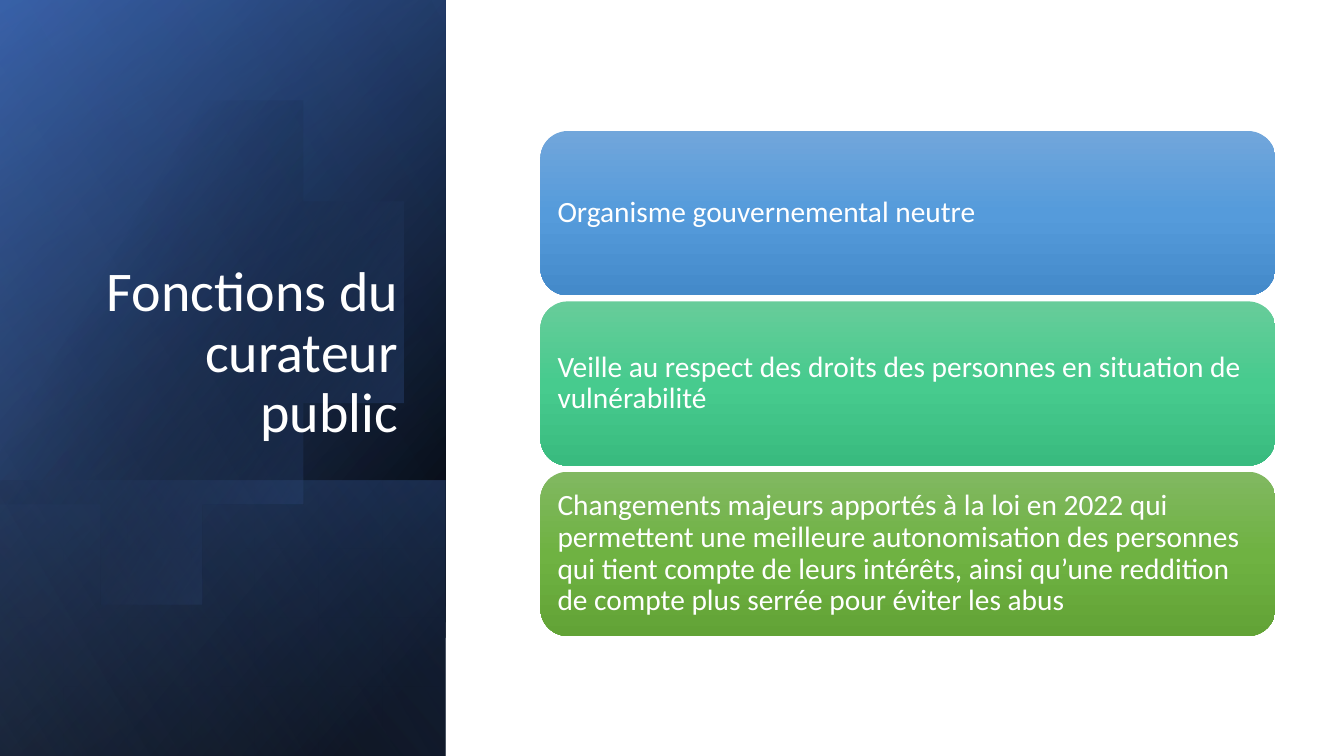
from dataclasses import dataclass
from math import acos, cos, pi, sin

from pptx import Presentation
from pptx.dml.color import RGBColor
from pptx.enum.shapes import MSO_SHAPE
from pptx.enum.text import MSO_ANCHOR, PP_ALIGN
from pptx.oxml import parse_xml
from pptx.oxml.ns import nsdecls, qn
from pptx.util import Inches, Pt


@dataclass(frozen=True)
class Theme:
    font: str = "Calibri"
    title_size: int = 40
    card_size: int = 21
    text: str = "FFFFFF"
    base: tuple = ((8, "000000", 100), (100, "2F5597", 100))
    glow: tuple = ((0, "000000", 0), (99, "4472C4", 46))
    footer: tuple = ((2, "4472C4", 29), (100, "000000", 30))
    disc: tuple = ((29, "000000", 0), (100, "4472C4", 43))
    sheen: tuple = ((0, "000000", 0), (99, "8FAADC", 11))
    cards: tuple = (
        ("71A6DB", "559BDB", "448ACA"),
        ("67CC9A", "47CB8E", "39BB7F"),
        ("81B861", "6FB242", "62A336"),
    )


THEME = Theme()
SLIDE_W, SLIDE_H = 13.33, 7.5
TITLE = "Fonctions du curateur public"
FUNCTIONS = (
    "Organisme gouvernemental neutre",
    "Veille au respect des droits des personnes en situation de vulnérabilité",
    "Changements majeurs apportés à la loi en 2022 qui permettent une meilleure "
    "autonomisation des personnes qui tient compte de leurs intérêts, ainsi qu’une "
    "reddition de compte plus serrée pour éviter les abus",
)


def paint(shape, stops, angle):
    shape.shadow.inherit = False
    shape.line.fill.background()
    shape.fill.background()
    stop_xml = "".join(
        f'<a:gs pos="{pos * 1000}"><a:srgbClr val="{color}">'
        f'<a:alpha val="{opacity * 1000}"/></a:srgbClr></a:gs>'
        for pos, color, opacity in stops
    )
    gradient = parse_xml(
        f'<a:gradFill {nsdecls("a")} rotWithShape="1"><a:gsLst>{stop_xml}</a:gsLst>'
        f'<a:lin ang="{angle * 60000}" scaled="0"/></a:gradFill>'
    )
    properties = shape.element.spPr
    properties.replace(properties.find(qn("a:noFill")), gradient)


def write(frame, text, size, anchor, align):
    frame.word_wrap = True
    frame.vertical_anchor = anchor
    frame.text = text
    paragraph = frame.paragraphs[0]
    paragraph.alignment = align
    paragraph.line_spacing = 0.9
    font = paragraph.runs[0].font
    font.name = THEME.font
    font.size = Pt(size)
    font.color.rgb = RGBColor.from_string(THEME.text)


def add_turned_layer(slide, box, stops, angle):
    left, top, width, height = box
    shift = (height - width) / 2
    layer = slide.shapes.add_shape(
        MSO_SHAPE.RECTANGLE,
        *map(Inches, (left - shift, top + shift, height, width)),
    )
    layer.rotation = 90
    layer.element.spPr.find(qn("a:xfrm")).set("flipH", "1")
    paint(layer, stops, angle)


def add_cut_disc(slide, box):
    left, top, width, height = box
    center_x, center_y, radius = width * 0.325, top + height * 0.45, height * 0.304
    limit = acos(-center_x / radius)
    steps = 120
    angles = [limit * (2 * step / steps - 1) for step in range(steps + 1)]
    points = [
        (left + center_x + radius * cos(a), center_y + radius * sin(a)) for a in angles
    ]
    builder = slide.shapes.build_freeform(*points[0], scale=Inches(1))
    builder.add_line_segments(points[1:], close=True)
    paint(builder.convert_to_shape(), THEME.disc, 30)


def add_title_panel(slide, box):
    left, top, width, height = box
    footer_h = height * 0.365
    footer_box = (left, top + height - footer_h, width, footer_h)
    add_turned_layer(slide, box, THEME.base, 50)
    add_turned_layer(slide, box, THEME.glow, 30)
    add_turned_layer(slide, footer_box, THEME.footer, 130)
    add_cut_disc(slide, box)
    add_turned_layer(slide, box, THEME.sheen, 120)
    title = slide.shapes.add_textbox(
        Inches(left + width * 0.145),
        Inches(top + height * 0.245),
        Inches(width * 0.77),
        Inches(height * 0.35),
    )
    write(title.text_frame, TITLE, THEME.title_size, MSO_ANCHOR.BOTTOM, PP_ALIGN.RIGHT)


def add_function_cards(slide, box, gap=0.06):
    left, top, width, height = box
    card_h = (height - gap * (len(FUNCTIONS) - 1)) / len(FUNCTIONS)
    for row, (text, colors) in enumerate(zip(FUNCTIONS, THEME.cards)):
        card = slide.shapes.add_shape(
            MSO_SHAPE.ROUNDED_RECTANGLE,
            *map(Inches, (left, top + row * (card_h + gap), width, card_h)),
        )
        paint(card, [(pos, c, 100) for pos, c in zip((0, 50, 100), colors)], 90)
        frame = card.text_frame
        frame.margin_left = frame.margin_right = Inches(0.09)
        frame.margin_top = frame.margin_bottom = Inches(0.09)
        write(frame, text, THEME.card_size, MSO_ANCHOR.MIDDLE, PP_ALIGN.LEFT)


def main():
    deck = Presentation()
    deck.slide_width, deck.slide_height = Inches(SLIDE_W), Inches(SLIDE_H)
    slide = deck.slides.add_slide(deck.slide_layouts[6])
    add_title_panel(slide, (0, 0, 4.42, SLIDE_H))
    add_function_cards(slide, (5.36, 1.3, 7.29, 5.01))
    deck.save("out.pptx")


if __name__ == "__main__":
    main()
